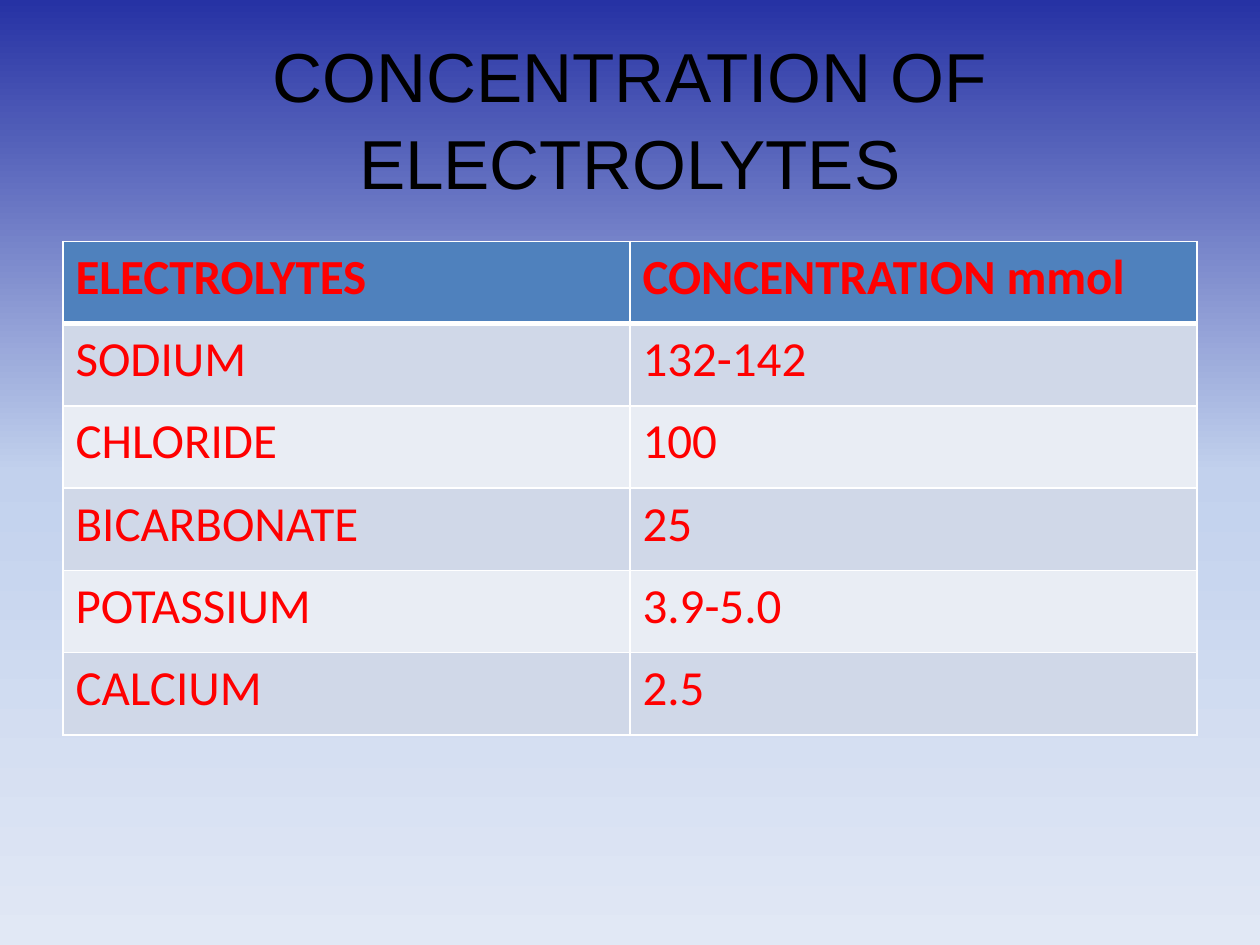
from copy import deepcopy

from lxml.etree import SubElement
from pptx import Presentation
from pptx.dml.color import RGBColor
from pptx.enum.text import MSO_ANCHOR, PP_ALIGN
from pptx.oxml.ns import qn
from pptx.util import Pt

COLORS = {
    "sky_top": "2632A4", "sky_mid": "C2D1ED", "sky_low": "E1E8F5",
    "title": "000000", "text": "FF0000", "header": "4F81BD",
    "band_dark": "D0D8E8", "band_light": "E9EDF4", "border": "FFFFFF",
}
ROWS = [
    ("ELECTROLYTES", "CONCENTRATION mmol"),
    ("SODIUM", "132-142"),
    ("CHLORIDE", "100"),
    ("BICARBONATE", "25"),
    ("POTASSIUM", "3.9-5.0"),
    ("CALCIUM", "2.5"),
]
TITLE_FONT = {"name": "Arial", "size": Pt(39.6), "bold": False}
CELL_FONT = {"name": "Calibri", "size": Pt(28)}


def rgb(name):
    return RGBColor.from_string(COLORS[name])


def set_font(font, values, color):
    for key, value in values.items():
        setattr(font, key, value)
    font.color.rgb = rgb(color)


def add_background(s):
    fill = s.background.fill
    fill.gradient()
    fill.gradient_angle = 270
    # A third stop, between the two of the default gradient
    stops = s.background._cSld.find(".//" + qn("a:gsLst"))
    stops.insert(1, deepcopy(stops[0]))
    names = ("sky_top", "sky_mid", "sky_low")
    for stop, name, position in zip(fill.gradient_stops, names, (0, 0.5, 1)):
        stop.color.rgb = rgb(name)
        stop.position = position


def add_title(s, text, left, top, width, height):
    tf = s.shapes.add_textbox(Pt(left), Pt(top), Pt(width), Pt(height)).text_frame
    tf.word_wrap = True
    tf.vertical_anchor = MSO_ANCHOR.MIDDLE
    p = tf.paragraphs[0]
    p.alignment = PP_ALIGN.CENTER
    p.line_spacing = 1.04
    r = p.add_run()
    r.text = text
    set_font(r.font, TITLE_FONT, "title")


def set_borders(cell, widths):
    tc_pr = cell._tc.get_or_add_tcPr()
    # Border lines come before the fill
    for i, (side, width) in enumerate(widths.items()):
        line = SubElement(tc_pr, qn(f"a:{side}"), w=str(Pt(width)))
        solid = SubElement(line, qn("a:solidFill"))
        SubElement(solid, qn("a:srgbClr"), val=COLORS["border"])
        tc_pr.insert(i, line)


def add_electrolyte_table(s, rows, left, top, width, height):
    table = s.shapes.add_table(len(rows), len(rows[0]), Pt(left), Pt(top),
                               Pt(width), Pt(height)).table
    for i, row in enumerate(rows):
        band = "header" if i == 0 else ("band_light", "band_dark")[i % 2]
        for j, text in enumerate(row):
            cell = table.cell(i, j)
            cell.fill.solid()
            cell.fill.fore_color.rgb = rgb(band)
            set_borders(cell, {"lnL": 1, "lnR": 1,
                               "lnT": 3 if i == 1 else 1,
                               "lnB": 3 if i == 0 else 1})
            r = cell.text_frame.paragraphs[0].add_run()
            r.text = text
            set_font(r.font, {**CELL_FONT, "bold": i == 0}, "text")


def main():
    prs = Presentation()
    prs.slide_width, prs.slide_height = Pt(720), Pt(540)
    s = prs.slides.add_slide(prs.slide_layouts[6])
    add_background(s)
    add_title(s, "CONCENTRATION OF ELECTROLYTES", 36, 21.6, 648, 90)
    add_electrolyte_table(s, ROWS, 36, 138, 648, 282)
    prs.save("out.pptx")


if __name__ == "__main__":
    main()
